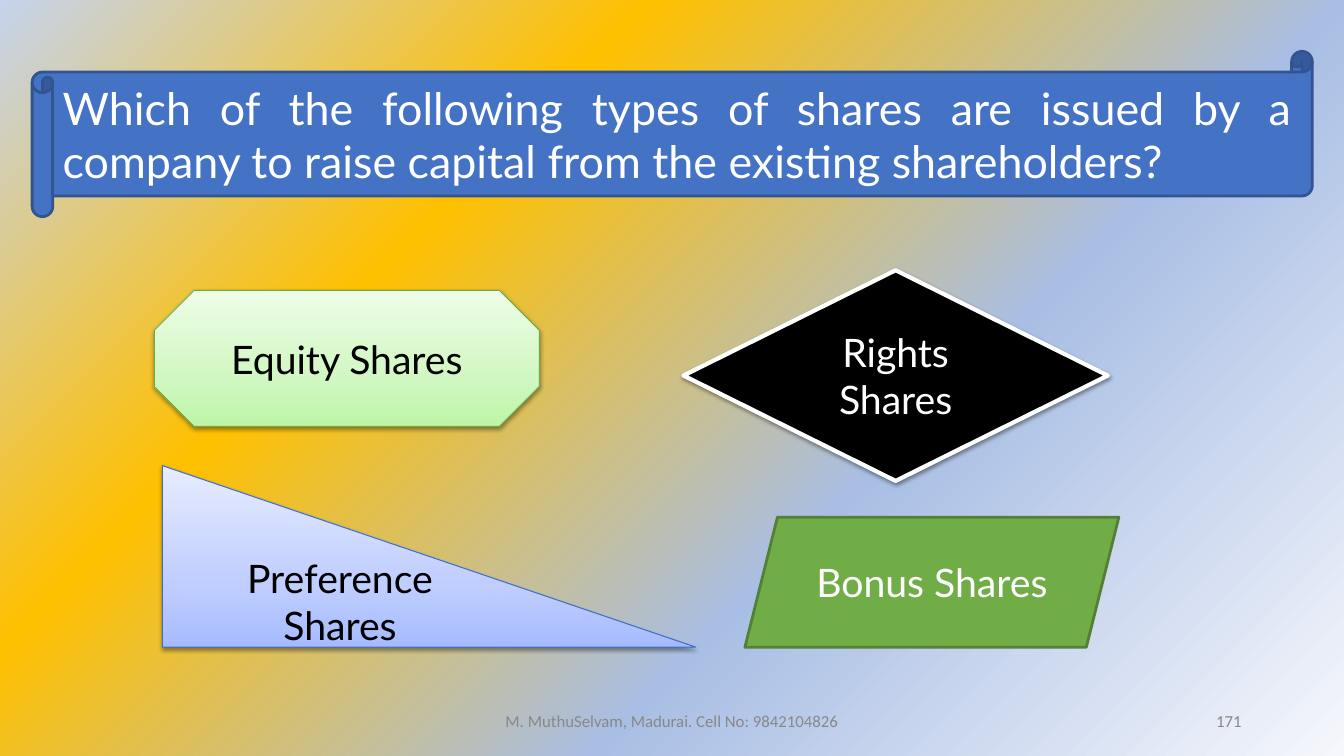
import pptx
import pptx.dml.color
import pptx.enum.shapes
import pptx.enum.text
import pptx.oxml
import pptx.oxml.ns
import pptx.util

Pt = pptx.util.Pt
SHAPE = pptx.enum.shapes.MSO_SHAPE
ALIGN = pptx.enum.text.PP_ALIGN

# Content: frames are left, top, width, height in points
BACKGROUND = [(0, "F5F7FC"), (36, "A9BEE4"), (69, "FFC000"), (100, "C5D3ED")]
GREEN_FADE = [(0, "BEF5A7"), (35, "D1F7C2"), (100, "EDFDE7")]
BLUE_FADE = [(0, "A6BBFF"), (35, "C0CEFF"), (100, "E7ECFF")]

QUESTION = dict(
    text="Which of the following types of shares are issued by a company "
         "to raise capital from the existing shareholders?",
    kind=SHAPE.HORIZONTAL_SCROLL, frame=(23, 36.7, 914.4, 118.1),
    fill="4472C4", line="325491", weight=2, size=32, align=ALIGN.JUSTIFY)
ANSWERS = [
    dict(text="Equity Shares", kind=SHAPE.OCTAGON, frame=(110.2, 207.4, 275, 97.2),
         fill=GREEN_FADE, line="6DAC43", weight=0.75, color="000000", shadow=True),
    dict(text="Rights Shares", kind=SHAPE.DIAMOND, frame=(488.2, 193, 303.1, 150.5),
         fill="000000", line="FFFFFF", weight=3, shadow=True),
    dict(text="Preference Shares", kind=SHAPE.RIGHT_TRIANGLE, frame=(115.9, 332.6, 380.9, 129.6),
         fill=BLUE_FADE, line="3F6FC3", weight=0.75, color="000000", shadow=True),
    dict(text="Bonus Shares", kind=SHAPE.PARALLELOGRAM, frame=(532.1, 369.4, 267.1, 92.9),
         fill="70AD47", line="538035", weight=2),
]
FOOTERS = [
    ("M. MuthuSelvam, Madurai. Cell No: 9842104826", (318, 500.5, 324, 28.8), ALIGN.CENTER),
    ("171", (678, 500.5, 216, 28.8), ALIGN.RIGHT),
]


def rgb(value):
    return pptx.dml.color.RGBColor.from_string(value)


def set_gradient(holder, stops, direction):
    """Swap the first solid fill inside holder for a gradient."""
    marks = "".join(
        f'<a:gs pos="{place * 1000}"><a:srgbClr val="{color}"/></a:gs>'
        for place, color in stops)
    gradient = pptx.oxml.parse_xml(
        f'<a:gradFill {pptx.oxml.ns.nsdecls("a")} rotWithShape="1">'
        f'<a:gsLst>{marks}</a:gsLst>{direction}</a:gradFill>')
    solid = holder.find(".//" + pptx.oxml.ns.qn("a:solidFill"))
    solid.getparent().replace(solid, gradient)


def add_shadow(shape):
    effects = shape.element.spPr.find(pptx.oxml.ns.qn("a:effectLst"))
    effects.append(pptx.oxml.parse_xml(
        f'<a:outerShdw {pptx.oxml.ns.nsdecls("a")} blurRad="{Pt(3.1)}" '
        f'dist="{Pt(1.6)}" dir="5400000" rotWithShape="0"><a:srgbClr val="000000">'
        '<a:alpha val="38000"/></a:srgbClr></a:outerShdw>'))


def write(box, text, *, size, font, color, align):
    frame = box.text_frame
    frame.word_wrap = True
    frame.vertical_anchor = pptx.enum.text.MSO_ANCHOR.MIDDLE
    para = frame.paragraphs[0]
    para.alignment = align
    span = para.add_run()
    span.text = text
    span.font.size = Pt(size)
    span.font.name = font
    span.font.color.rgb = rgb(color)


def add_figure(page, *, text, kind, frame, fill, line, weight,
               size=28, color="FFFFFF", align=ALIGN.CENTER, shadow=False):
    shape = page.shapes.add_shape(kind, *map(Pt, frame))
    shape.shadow.inherit = False
    shape.fill.solid()
    if isinstance(fill, str):
        shape.fill.fore_color.rgb = rgb(fill)
    else:
        set_gradient(shape.element.spPr, fill, '<a:lin ang="16200000" scaled="1"/>')
    shape.line.color.rgb = rgb(line)
    shape.line.width = Pt(weight)
    if shadow:
        add_shadow(shape)
    write(shape, text, size=size, font="Lato", color=color, align=align)


def main():
    deck = pptx.Presentation()
    deck.slide_width, deck.slide_height = Pt(960), Pt(540)
    page = deck.slides.add_slide(deck.slide_layouts[6])

    # Background fading out from the bottom right corner
    page.background.fill.solid()
    set_gradient(page.element, BACKGROUND,
                 '<a:path path="circle"><a:fillToRect l="100000" t="100000"/></a:path>'
                 '<a:tileRect r="-100000" b="-100000"/>')

    # Question and answers
    for figure in [QUESTION, *ANSWERS]:
        add_figure(page, **figure)

    # Footer and page number
    for text, frame, align in FOOTERS:
        box = page.shapes.add_textbox(*map(Pt, frame))
        write(box, text, size=12, font="Calibri", color="888888", align=align)

    deck.save("out.pptx")


if __name__ == "__main__":
    main()
